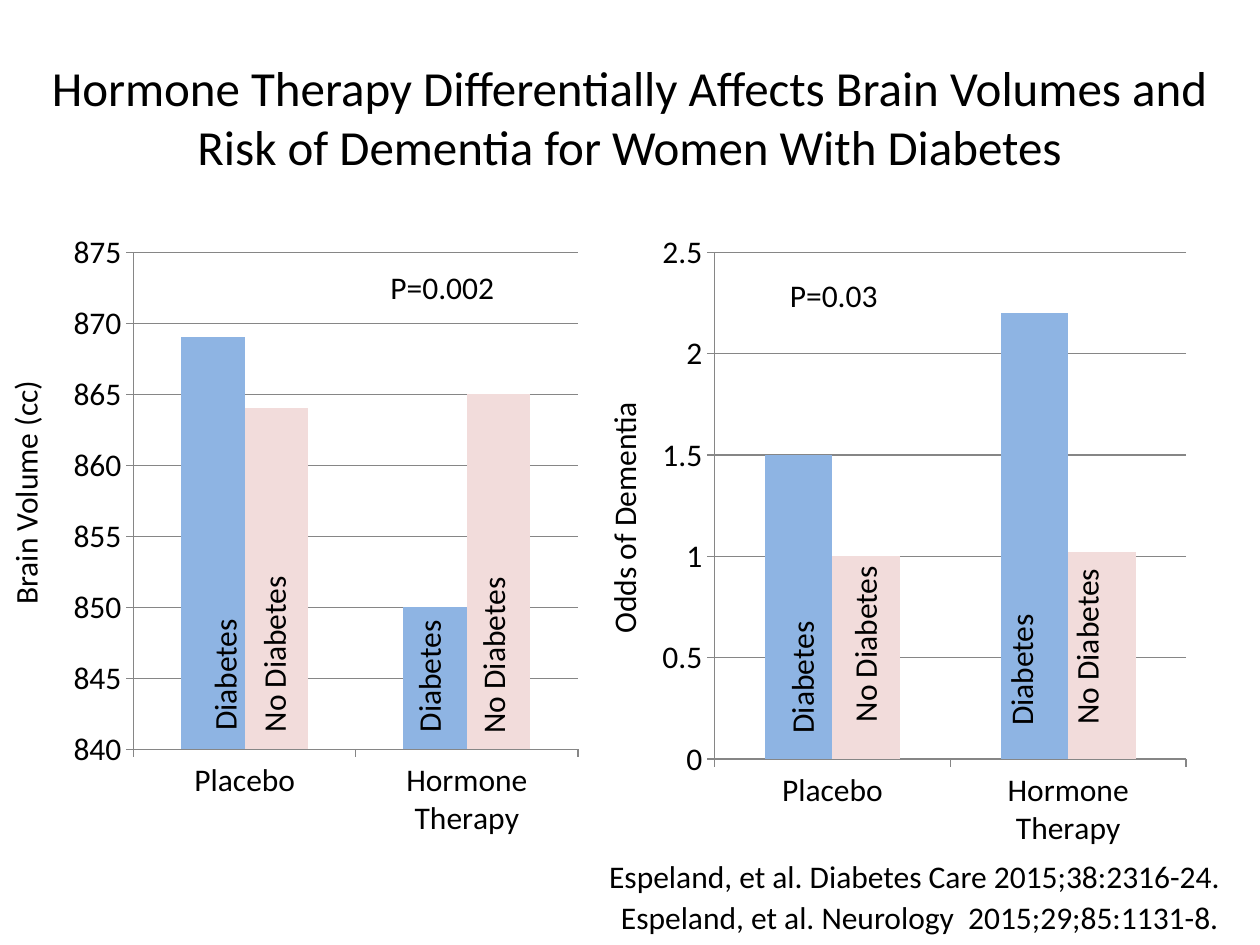
from pptx import Presentation
from pptx.chart.data import CategoryChartData
from pptx.dml.color import RGBColor
from pptx.enum.chart import XL_CHART_TYPE, XL_TICK_MARK
from pptx.enum.text import MSO_ANCHOR, MSO_AUTO_SIZE, PP_ALIGN
from pptx.util import Inches, Pt

FONT = "Calibri"
COLORS = {"text": "000000", "axis": "868686",
          "Series 1": "8EB4E3", "Series 2": "F2DCDB"}
TITLE = ("Hormone Therapy Differentially Affects Brain Volumes and "
         "Risk of Dementia for Women With Diabetes")
GROUPS = ["Placebo", "Hormone Therapy"]

# Boxes are left, top, width, height in inches; bar labels are left, top.
PANELS = [
    {"box": (0.5, 1.75, 4.17, 5), "scale": (840, 875, 5),
     "values": [(869, 850), (864, 865)],
     "axis": ("Brain Volume (cc)", (0, 1.91, 0.5, 4)),
     "p": ("P=0.002", (3, 2.08, 1.42, 0.4)),
     "bars": [("Diabetes", 1.58, 3.98), ("No Diabetes", 1.97, 3.99),
              ("Diabetes", 3.2, 3.99), ("No Diabetes", 3.71, 4)]},
    {"box": (5.17, 1.75, 4.33, 5.08), "scale": (0, 2.5, 0.5),
     "values": [(1.5, 2.2), (1, 1.02)],
     "axis": ("Odds of Dementia", (4.75, 2.11, 0.5, 4)),
     "p": ("P=0.03", (6.17, 2.14, 1.42, 0.4)),
     "bars": [("Diabetes", 6.16, 4), ("No Diabetes", 6.66, 3.91),
              ("Diabetes", 7.9, 3.94), ("No Diabetes", 8.42, 3.93)]},
]
SOURCES = [
    ("Espeland, et al. Diabetes Care 2015;38:2316-24. ", (4.42, 6.75, 5.42, 0.4)),
    ("Espeland, et al. Neurology  2015;29;85:1131-8. ", (4.5, 7.08, 5.33, 0.4)),
]


def color(name):
    return RGBColor.from_string(COLORS[name])


def style(font, size=18):
    font.name, font.size, font.bold = FONT, Pt(size), False
    font.color.rgb = color("text")


def write(frame, text, align, size=18):
    para = frame.paragraphs[0]
    para.alignment = align
    run = para.add_run()
    run.text = text
    style(run.font, size)


def add_label(slide, text, box, align=PP_ALIGN.LEFT, upright=False):
    """Add a text box; upright text reads from bottom to top."""
    frame = slide.shapes.add_textbox(*map(Inches, box)).text_frame
    frame.word_wrap = True
    frame.auto_size = MSO_AUTO_SIZE.SHAPE_TO_FIT_TEXT
    if upright:
        frame._txBody.bodyPr.set("vert", "vert270")
    write(frame, text, align)


def add_bars(slide, panel):
    data = CategoryChartData()
    data.categories = GROUPS
    for i, values in enumerate(panel["values"], 1):
        data.add_series(f"Series {i}", values)
    chart = slide.shapes.add_chart(
        XL_CHART_TYPE.COLUMN_CLUSTERED, *map(Inches, panel["box"]), data).chart
    chart.has_legend = chart.has_title = False
    style(chart.font)

    plot = chart.plots[0]
    plot.gap_width, plot.overlap = 150, 0
    plot.vary_by_categories = False
    for series in plot.series:
        series.format.fill.solid()
        series.format.fill.fore_color.rgb = color(series.name)

    axis = chart.value_axis
    axis.minimum_scale, axis.maximum_scale, axis.major_unit = panel["scale"]
    axis.has_major_gridlines = True
    axis.tick_labels.number_format = "General"
    axis.tick_labels.number_format_is_linked = False
    for each in (axis, chart.category_axis):
        each.major_tick_mark = XL_TICK_MARK.OUTSIDE
    for part in (axis, chart.category_axis, axis.major_gridlines):
        part.format.line.color.rgb = color("axis")
        part.format.line.width = Pt(0.75)


def main():
    deck = Presentation()
    deck.slide_width, deck.slide_height = Inches(10), Inches(7.5)
    slide = deck.slides.add_slide(deck.slide_layouts[5])

    title = slide.shapes.title
    title.left, title.top, title.width, title.height = map(
        Inches, (0.08, 0.3, 9.83, 1.25))
    title.text_frame.auto_size = MSO_AUTO_SIZE.NONE
    title.text_frame.vertical_anchor = MSO_ANCHOR.MIDDLE
    write(title.text_frame, TITLE, PP_ALIGN.CENTER, 28)

    for panel in PANELS:
        add_bars(slide, panel)
        add_label(slide, *panel["p"])
        add_label(slide, *panel["axis"], PP_ALIGN.CENTER, upright=True)
        for text, left, top in panel["bars"]:
            add_label(slide, text, (left, top, 0.5, 1.92), upright=True)
    for text, box in SOURCES:
        add_label(slide, text, box, PP_ALIGN.RIGHT)

    deck.save("out.pptx")


if __name__ == "__main__":
    main()
